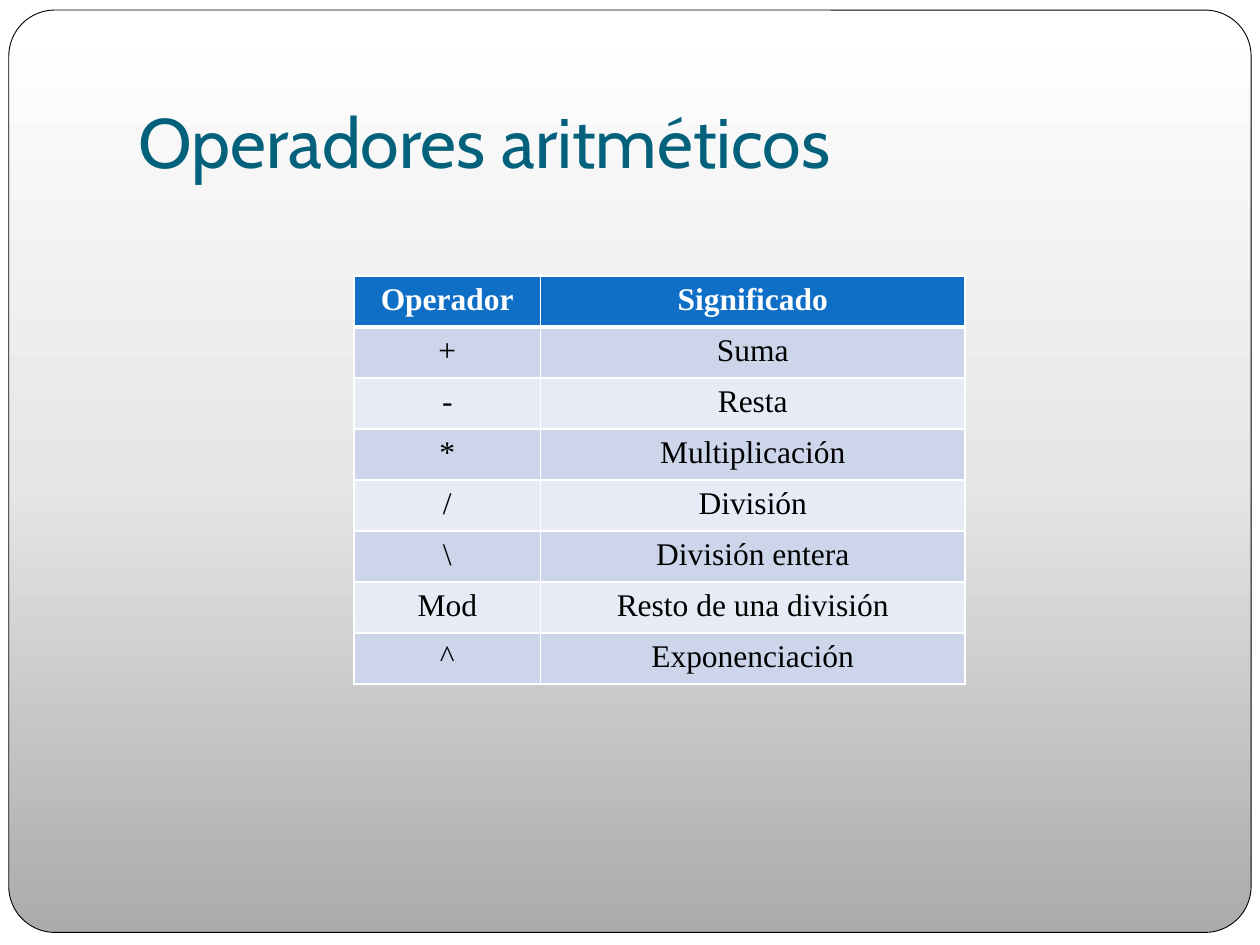
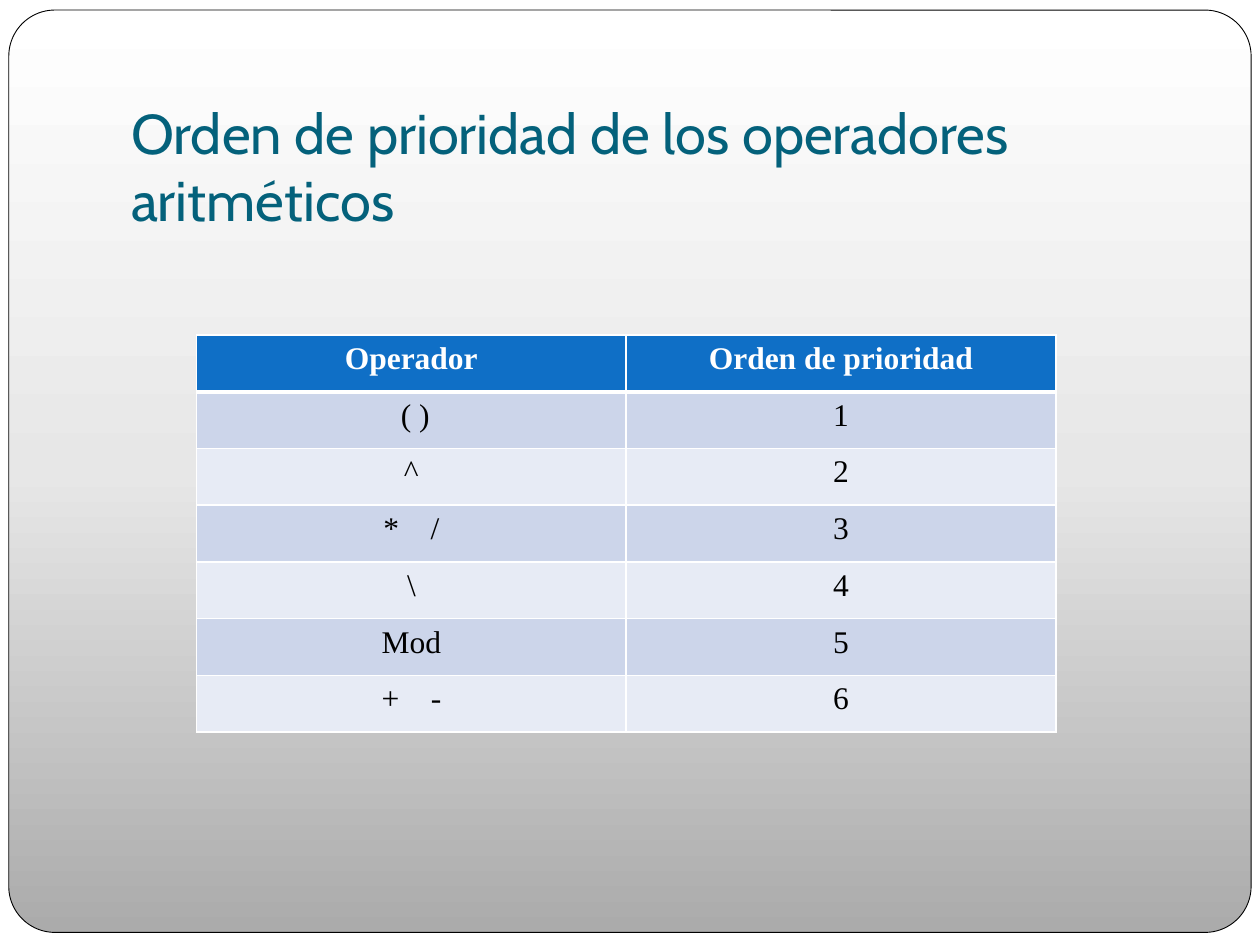
"""Build two slides on arithmetic operators and their order of priority."""
from dataclasses import dataclass

from lxml.etree import SubElement
from pptx import Presentation
from pptx.dml.color import RGBColor
from pptx.enum.shapes import MSO_SHAPE
from pptx.enum.text import MSO_ANCHOR, MSO_AUTO_SIZE, PP_ALIGN
from pptx.oxml.ns import qn
from pptx.util import Inches, Length, Pt

WIDTH, HEIGHT = Inches(10), Inches(7.5)
GRID_COLUMNS, GRID_ROWS = 100, 75

TITLE_COLOR = RGBColor(0x04, 0x61, 0x7B)
HEADER_FILL = RGBColor(0x0F, 0x6F, 0xC6)
BAND_FILLS = RGBColor(0xCC, 0xD5, 0xEA), RGBColor(0xE7, 0xEB, 0xF5)
WHITE = RGBColor(0xFF, 0xFF, 0xFF)
BLACK = RGBColor(0x00, 0x00, 0x00)
FRAME_STOPS = (
    (0, RGBColor(0xAB, 0xAB, 0xAB)),
    (50, RGBColor(0xE7, 0xE7, 0xE7)),
    (100, WHITE),
)
TITLE_FONT, TABLE_FONT = "Cabin", "Times New Roman"
WIDE_GAP = Pt(13.5)


@dataclass(frozen=True)
class Title:
    """A heading, its place on the grid and its text size."""
    text: str
    column: float
    row: float
    size: int


@dataclass(frozen=True)
class OperatorTable:
    """A table on the grid; a tab in a cell marks a wide gap."""
    column: float
    row: float
    column_widths: tuple[float, ...]
    row_height: float
    rows: tuple[tuple[str, ...], ...]


@dataclass(frozen=True)
class OperatorSlide:
    """A title with the table below it."""
    title: Title
    table: OperatorTable


SLIDES = (
    OperatorSlide(
        Title("Operadores aritméticos", 10, 3, 40),
        OperatorTable(28.1, 21.9, (14.8, 33.7), 4.05, (
            ("Operador", "Significado"),
            ("+", "Suma"),
            ("-", "Resta"),
            ("*", "Multiplicación"),
            ("/", "División"),
            ("\\", "División entera"),
            ("Mod", "Resto de una división"),
            ("^", "Exponenciación"),
        )),
    ),
    OperatorSlide(
        Title("Orden de prioridad de los operadores aritméticos", 9.4, 7, 32),
        OperatorTable(15.6, 26.6, (34.1, 34.1), 4.5, (
            ("Operador", "Orden de prioridad"),
            (" ( )", "1"),
            ("^", "2"),
            ("*\t/", "3"),
            ("\\", "4"),
            ("Mod", "5"),
            ("+\t-", "6"),
        )),
    ),
)


def across(columns: float) -> Length:
    """Return the width of a number of grid columns."""
    return Length(round(WIDTH * columns / GRID_COLUMNS))


def down(rows: float) -> Length:
    """Return the height of a number of grid rows."""
    return Length(round(HEIGHT * rows / GRID_ROWS))


def add_frame(slide, layout) -> None:
    """Draw the rounded gradient frame and place it on the layout."""
    frame = slide.shapes.add_shape(MSO_SHAPE.ROUNDED_RECTANGLE,
                                   across(0.7), down(0.8), across(98.6), down(73.2))
    frame.adjustments[0] = 0.05
    frame.shadow.inherit = False
    frame.line.color.rgb = BLACK
    frame.line.width = Pt(0.5)
    frame.fill.gradient()
    frame.fill.gradient_angle = 90
    stops = frame.element.spPr.find(".//" + qn("a:gsLst"))
    for stop in list(stops):
        stops.remove(stop)
    for percent, color in FRAME_STOPS:
        stop = SubElement(stops, qn("a:gs"), pos=str(percent * 1000))
        SubElement(stop, qn("a:srgbClr"), val=str(color))
    layout.shapes.element.insert(2, frame.element)


def set_title(slide, title: Title) -> None:
    """Place and format the title placeholder."""
    shape = slide.shapes.title
    shape.left, shape.top = across(title.column), down(title.row)
    shape.width, shape.height = across(85), down(12.5)
    frame = shape.text_frame
    frame.text = title.text
    frame.word_wrap = True
    frame.auto_size = MSO_AUTO_SIZE.NONE
    frame.vertical_anchor = MSO_ANCHOR.BOTTOM
    frame.margin_bottom = Inches(0.1)
    paragraph = frame.paragraphs[0]
    paragraph.alignment = PP_ALIGN.LEFT
    paragraph.font.name = TITLE_FONT
    paragraph.font.size = Pt(title.size)
    paragraph.font.color.rgb = TITLE_COLOR


def set_borders(cell, top: float, bottom: float) -> None:
    """Give a cell white borders, with its own top and bottom widths."""
    properties = cell._tc.get_or_add_tcPr()
    borders = (("L", 1), ("R", 1), ("T", top), ("B", bottom))
    for index, (side, width) in enumerate(borders):
        line = SubElement(properties, qn(f"a:ln{side}"), w=str(Pt(width)))
        fill = SubElement(line, qn("a:solidFill"))
        SubElement(fill, qn("a:srgbClr"), val=str(WHITE))
        properties.insert(index, line)


def write_cell(cell, text: str, is_header: bool) -> None:
    """Write centred text, widening the space that a tab marks."""
    paragraph = cell.text_frame.paragraphs[0]
    paragraph.alignment = PP_ALIGN.CENTER
    font = paragraph.font
    font.name, font.size, font.bold = TABLE_FONT, Pt(18), is_header
    font.color.rgb = WHITE if is_header else BLACK
    for index, part in enumerate(text.split("\t")):
        if index:
            gap = paragraph.add_run()
            gap.text = " "
            gap.font._element.set("spc", str(round(WIDE_GAP.pt * 100)))
        paragraph.add_run().text = part


def add_operator_table(slide, spec_table: OperatorTable) -> None:
    """Draw a table with a header row and alternating bands."""
    rows, widths = spec_table.rows, spec_table.column_widths
    table = slide.shapes.add_table(
        len(rows), len(widths), across(spec_table.column), down(spec_table.row),
        across(sum(widths)), down(spec_table.row_height * len(rows))).table
    for column, width in zip(table.columns, widths):
        column.width = across(width)
    for row_index, texts in enumerate(rows):
        table.rows[row_index].height = down(spec_table.row_height)
        is_header = row_index == 0
        for column_index, text in enumerate(texts):
            cell = table.cell(row_index, column_index)
            cell.fill.solid()
            cell.fill.fore_color.rgb = HEADER_FILL if is_header else BAND_FILLS[(row_index - 1) % 2]
            set_borders(cell, 3 if row_index == 1 else 1, 3 if is_header else 1)
            write_cell(cell, text, is_header)


def main() -> None:
    """Build and save the presentation."""
    presentation = Presentation()
    presentation.slide_width, presentation.slide_height = WIDTH, HEIGHT
    layout = presentation.slide_layouts.get_by_name("Title Only")
    for index, content in enumerate(SLIDES):
        slide = presentation.slides.add_slide(layout)
        if index == 0:
            add_frame(slide, layout)
        set_title(slide, content.title)
        add_operator_table(slide, content.table)
    presentation.save("out.pptx")


if __name__ == "__main__":
    main()
